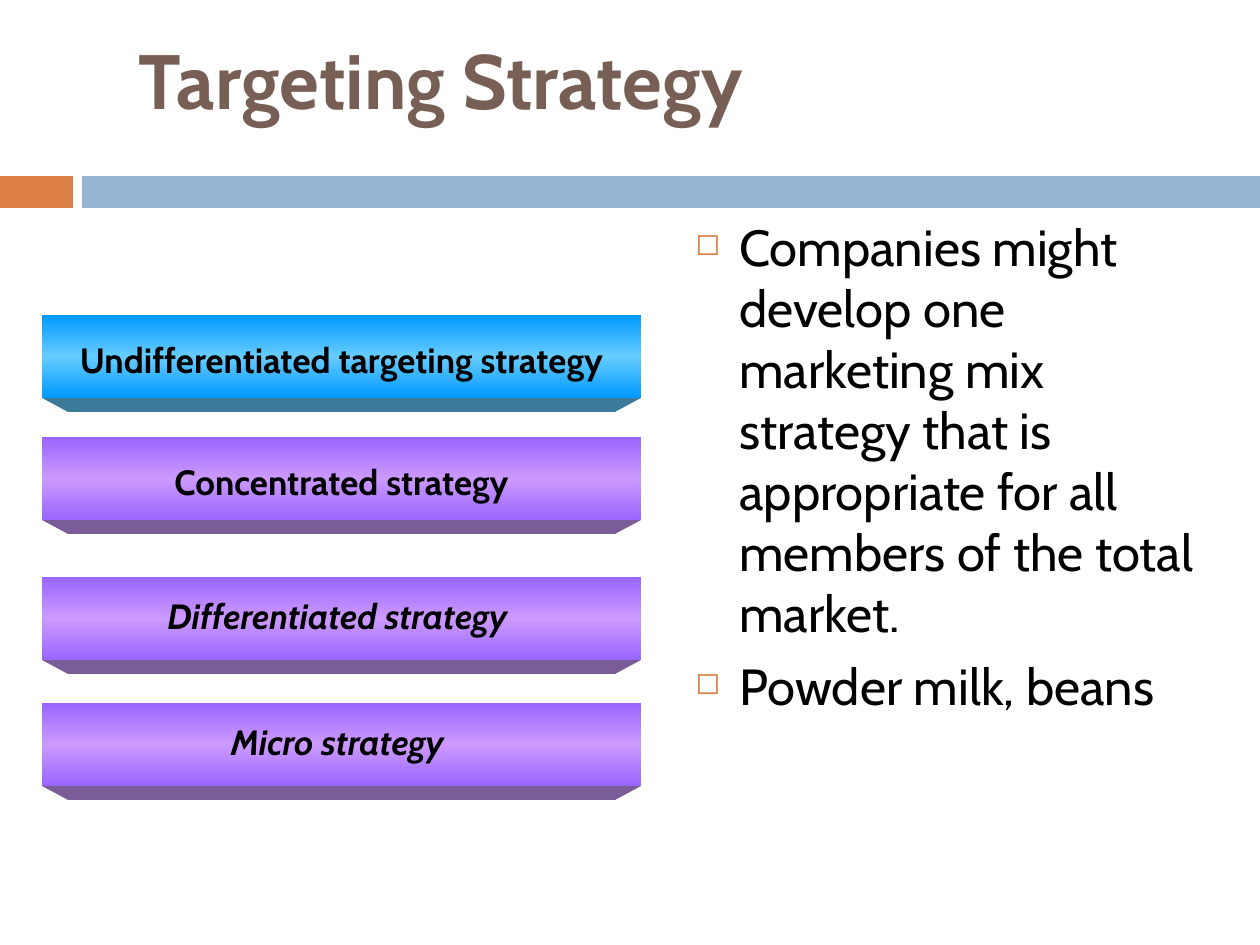
import copy

import pptx
import pptx.dml.color
import pptx.enum.shapes
import pptx.enum.text
import pptx.oxml.ns
import pptx.util
from lxml import etree

RGBColor = pptx.dml.color.RGBColor
ORANGE = RGBColor(0xDD, 0x80, 0x47)
PALE_BLUE = RGBColor(0x94, 0xB6, 0xD2)
BROWN = RGBColor(0x77, 0x5F, 0x55)
BLACK = RGBColor(0x00, 0x00, 0x00)
# Edge, centre and bevel colours of a bar
BLUE_BAR = (RGBColor(0x00, 0x99, 0xFF), RGBColor(0x66, 0xCC, 0xFF), RGBColor(0x3D, 0x7A, 0x99))
PURPLE_BAR = (RGBColor(0x99, 0x66, 0xFF), RGBColor(0xCC, 0x99, 0xFF), RGBColor(0x7A, 0x5C, 0x99))

PX_PER_INCH = 126
BAR_LEFT, BAR_WIDTH, BAR_HEIGHT = 42, 599, 83
BEVEL_INSET, BEVEL_HEIGHT = 26, 14
BULLET_INDENT = 44


def px(length):
    return pptx.util.Emu(round(length * 914400 / PX_PER_INCH))


def qn(tag):
    return pptx.oxml.ns.qn(tag)


def write(paragraph, text, *, size, color=BLACK, bold=False, italic=False, font="Cabin"):
    run = paragraph.add_run()
    run.text = text
    run.font.name = font
    run.font.size = pptx.util.Pt(size)
    run.font.color.rgb = color
    run.font.bold = bold
    run.font.italic = italic


def add_bullet(paragraph, character, color, percent):
    """Give the paragraph a hanging bullet."""
    properties = paragraph._p.get_or_add_pPr()
    properties.set("marL", str(px(BULLET_INDENT)))
    properties.set("indent", str(-px(BULLET_INDENT)))
    bullet_color = etree.SubElement(properties, qn("a:buClr"))
    etree.SubElement(bullet_color, qn("a:srgbClr"), val=str(color))
    etree.SubElement(properties, qn("a:buSzPct"), val=str(percent * 1000))
    etree.SubElement(properties, qn("a:buChar"), char=character)


class SlideBuilder:
    def __init__(self, slide):
        self.slide = slide

    def rectangle(self, left, top, width, height, color=None):
        shape = self.slide.shapes.add_shape(
            pptx.enum.shapes.MSO_SHAPE.RECTANGLE, px(left), px(top), px(width), px(height))
        shape.shadow.inherit = False
        shape.line.fill.background()
        if color is not None:
            shape.fill.solid()
            shape.fill.fore_color.rgb = color
        return shape

    def text_box(self, left, top, width, height, anchor=pptx.enum.text.MSO_ANCHOR.TOP):
        frame = self.slide.shapes.add_textbox(px(left), px(top), px(width), px(height)).text_frame
        frame.word_wrap = True
        frame.vertical_anchor = anchor
        return frame

    def title(self, text):
        frame = self.text_box(126, 0, 1134, 158, pptx.enum.text.MSO_ANCHOR.MIDDLE)
        write(frame.paragraphs[0], text, size=44, color=BROWN, bold=True)

    def bullets(self, texts):
        frame = self.text_box(683, 210, 525, 662)
        for index, text in enumerate(texts):
            paragraph = frame.add_paragraph() if index else frame.paragraphs[0]
            paragraph.space_before = pptx.util.Pt(7)
            add_bullet(paragraph, "◻", ORANGE, 60)
            write(paragraph, text, size=29)

    def bevel(self, top, color):
        right = BAR_LEFT + BAR_WIDTH
        bottom = top + BEVEL_HEIGHT
        builder = self.slide.shapes.build_freeform(px(BAR_LEFT), px(top))
        builder.add_line_segments([
            (px(right), px(top)),
            (px(right - BEVEL_INSET), px(bottom)),
            (px(BAR_LEFT + BEVEL_INSET), px(bottom)),
        ], close=True)
        shape = builder.convert_to_shape()
        shape.shadow.inherit = False
        shape.fill.solid()
        shape.fill.fore_color.rgb = color
        shape.line.fill.background()

    def bar(self, top, text, colors, label_offset, label_width, italic):
        edge, centre, shade = colors
        self.bevel(top + BAR_HEIGHT, shade)
        shape = self.rectangle(BAR_LEFT, top, BAR_WIDTH, BAR_HEIGHT)
        shape.fill.gradient()
        shape.fill.gradient_angle = 90
        stop_list = shape._element.spPr.find(qn("a:gradFill")).find(qn("a:gsLst"))
        stop_list.insert(1, copy.deepcopy(stop_list[0]))
        for stop, position, color in zip(
                shape.fill.gradient_stops, (0, 0.5, 1), (edge, centre, edge)):
            stop.position = position
            stop.color.rgb = color
        frame = self.text_box(BAR_LEFT, top + label_offset, label_width, 54)
        frame.paragraphs[0].alignment = pptx.enum.text.PP_ALIGN.CENTER
        write(frame.paragraphs[0], text, size=20, bold=True, italic=italic)


def main():
    presentation = pptx.Presentation()
    presentation.slide_width, presentation.slide_height = px(1260), px(945)
    builder = SlideBuilder(presentation.slides.add_slide(presentation.slide_layouts[6]))

    builder.rectangle(0, 176, 73, 32, ORANGE)
    builder.rectangle(82, 176, 1178, 32, PALE_BLUE)
    builder.title("Targeting Strategy")
    builder.bullets([
        "Companies might develop one marketing mix strategy that is appropriate "
        "for all members of the total market.",
        "Powder milk, beans",
    ])

    upright = {"label_offset": 17, "label_width": 599, "italic": False}
    slanted = {"label_offset": 11, "label_width": 591, "italic": True}
    for top, text, colors, label in (
        (315, "Undifferentiated targeting strategy", BLUE_BAR, upright),
        (437, "Concentrated strategy", PURPLE_BAR, upright),
        (577, "Differentiated strategy", PURPLE_BAR, slanted),
        (703, "Micro strategy", PURPLE_BAR, slanted),
    ):
        builder.bar(top, text, colors, **label)

    presentation.save("out.pptx")


if __name__ == "__main__":
    main()
